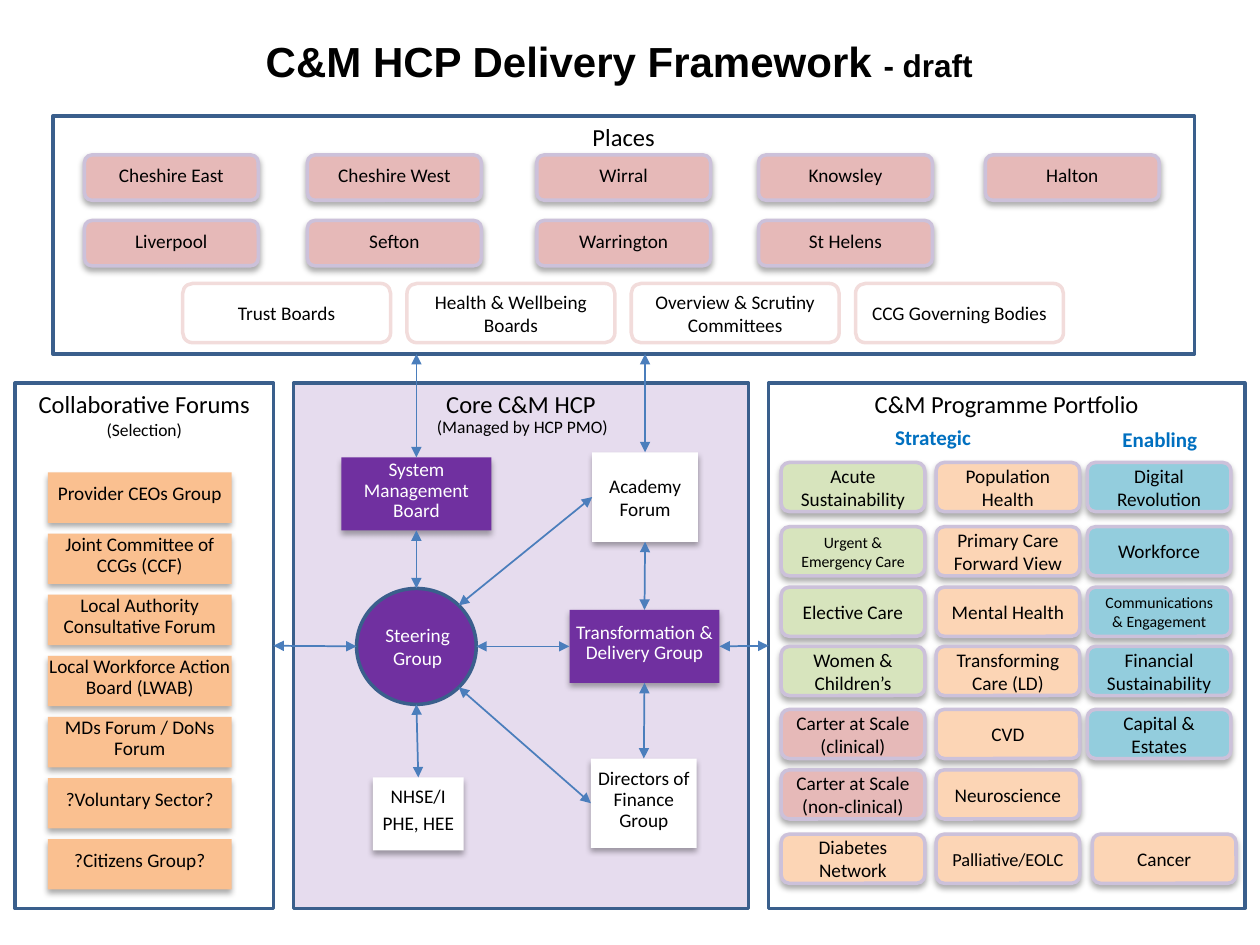
from math import sqrt

from lxml import etree
from pptx import Presentation
from pptx.dml.color import RGBColor
from pptx.enum.shapes import MSO_CONNECTOR, MSO_SHAPE
from pptx.enum.text import MSO_ANCHOR, PP_ALIGN
from pptx.oxml.ns import qn
from pptx.util import Inches, Pt

RECT, ROUND, OVAL = MSO_SHAPE.RECTANGLE, MSO_SHAPE.ROUNDED_RECTANGLE, MSO_SHAPE.OVAL
TOP, MIDDLE = MSO_ANCHOR.TOP, MSO_ANCHOR.MIDDLE
CENTER = PP_ALIGN.CENTER
STRAIGHT = MSO_CONNECTOR.STRAIGHT

BLACK, WHITE = "000000", "FFFFFF"
NAVY, ARROW, PURPLE, HEADING = "3A5F8C", "4B7EBC", "7030A0", "0070C0"
ROSE, PEACH, GREEN, TEAL, ORANGE = "E6B9B8", "FCD5B5", "D7E4BD", "93CDDD", "FAC090"
LILAC, BLUSH = "CCC1DA", "F2DCDB"

PLACE_COLUMNS = [0.67, 2.44, 4.26, 6.02, 7.82]
PLACE_ROWS = [1.23, 1.75]
PLACES = [
    ["Cheshire East", "Cheshire West", "Wirral", "Knowsley", "Halton"],
    ["Liverpool", "Sefton", "Warrington", "St Helens"],
]
BOARDS = ["Trust Boards", "Health & Wellbeing Boards",
          "Overview & Scrutiny Committees", "CCG Governing Bodies"]
FORUMS = ["Provider CEOs Group", "Joint Committee of CCGs (CCF)",
          "Local Authority Consultative Forum", "Local Workforce Action Board (LWAB)",
          "MDs Forum / DoNs Forum", "?Voluntary Sector?", "?Citizens Group?"]
PROGRAMME_COLUMNS = [6.2, 7.43, 8.63]
PROGRAMME_ROWS = [3.67, 4.18, 4.66, 5.13, 5.63, 6.11, 6.62]
PROGRAMMES = [
    [("Acute Sustainability", GREEN), ("Urgent & Emergency Care", GREEN),
     ("Elective Care", GREEN), ("Women & Children’s", GREEN),
     ("Carter at Scale (clinical)", ROSE), ("Carter at Scale (non-clinical)", ROSE),
     ("Diabetes Network", PEACH)],
    [("Population Health", PEACH), ("Primary Care Forward View", PEACH),
     ("Mental Health", PEACH), ("Transforming Care (LD)", PEACH), ("CVD", PEACH),
     ("Neuroscience", PEACH), ("Palliative/EOLC", PEACH)],
    [("Digital Revolution", TEAL), ("Workforce", TEAL),
     ("Communications & Engagement", TEAL), ("Financial Sustainability", TEAL),
     ("Capital & Estates", TEAL)],
]
SMALLER_LABELS = {"Urgent & Emergency Care": 9, "Communications & Engagement": 9,
                  "Palliative/EOLC": 10.5}


def rgb(color):
    return RGBColor.from_string(color)


def apply(target, formats):
    for name, value in formats.items():
        setattr(target, name, value)


def write(frame, lines, color=BLACK, anchor=TOP, bold=False, paragraph_format=None):
    apply(frame, {"word_wrap": True, "vertical_anchor": anchor})
    for index, (text, size) in enumerate(lines):
        paragraph = frame.paragraphs[0] if index == 0 else frame.add_paragraph()
        apply(paragraph, {"alignment": CENTER, **(paragraph_format or {})})
        run = paragraph.add_run()
        run.text = text
        apply(run.font, {"name": "Calibri", "size": Pt(size), "bold": bold})
        run.font.color.rgb = rgb(color)


def add_shadow(shape):
    effects = shape._element.spPr.find(qn("a:effectLst"))
    shadow = etree.SubElement(effects, qn("a:outerShdw"), blurRad=str(Pt(3.5)),
                              dist=str(Pt(2.2)), dir="5400000", rotWithShape="0")
    tint = etree.SubElement(shadow, qn("a:srgbClr"), val=BLACK)
    etree.SubElement(tint, qn("a:alpha"), val="32000")


def add_block(slide, kind, area, fill=None, outline=None, raised=False):
    block = slide.shapes.add_shape(kind, *map(Inches, area))
    block.shadow.inherit = False
    if fill:
        block.fill.solid()
        block.fill.fore_color.rgb = rgb(fill)
    else:
        block.fill.background()
    if outline:
        block.line.color.rgb = rgb(outline)
        block.line.width = Pt(2)
    else:
        block.line.fill.background()
    if raised:
        add_shadow(block)
    return block


def add_panel(slide, area, lines, fill=None):
    panel = add_block(slide, RECT, area, fill, NAVY)
    write(panel.text_frame, lines)
    return panel


def add_card(slide, area, lines, fill, color=BLACK):
    card = add_block(slide, RECT, area, fill, raised=True)
    apply(card.text_frame, {"margin_left": 0, "margin_right": 0,
                            "margin_top": Inches(0.01), "margin_bottom": Inches(0.06)})
    write(card.text_frame, [(line, 11) for line in lines], color, MIDDLE,
          paragraph_format={"line_spacing": 0.9, "space_after": Pt(3.85)})
    return card


def add_pill(slide, area, text, fill, outline=LILAC, anchor=MIDDLE):
    pill = add_block(slide, ROUND, area, fill, outline, raised=fill is not None)
    write(pill.text_frame, [(text, SMALLER_LABELS.get(text, 11))], anchor=anchor)


def add_label(slide, area, text, size, color=BLACK, bold=False):
    label = slide.shapes.add_textbox(*map(Inches, area))
    write(label.text_frame, [(text, size)], color, bold=bold)


def add_link(slide, start, start_site, end, end_site=None):
    link = slide.shapes.add_connector(STRAIGHT, 0, 0, 0, 0)
    link.begin_connect(start, start_site)
    if end_site is None:
        link.end_x, link.end_y = end
    else:
        link.end_connect(end, end_site)
    link.line.color.rgb = rgb(ARROW)
    link.line.width = Pt(1)
    line = link.line._get_or_add_ln()
    for tip in ("a:headEnd", "a:tailEnd"):
        etree.SubElement(line, qn(tip), type="triangle")
    etree.SubElement(link._element.spPr, qn("a:effectLst"))


def rim_point(shape, across, down):
    return (round(shape.left + shape.width * (1 + across) / 2),
            round(shape.top + shape.height * (1 + down) / 2))


def below(shape, panel):
    return shape.left + shape.width // 2, panel.top + panel.height


def add_title(slide):
    title = slide.shapes.title
    apply(title, dict(zip(("left", "top", "width", "height"),
                          map(Inches, (0.78, 0.21, 8.27, 0.55)))))
    title.text_frame.vertical_anchor = MIDDLE
    paragraph = title.text_frame.paragraphs[0]
    paragraph.alignment = CENTER
    for text, size in (("C&M HCP Delivery Framework ", 24), ("- draft", 18)):
        run = paragraph.add_run()
        run.text = text
        apply(run.font, {"name": "Arial", "size": Pt(size), "bold": True})
        run.font.color.rgb = rgb(BLACK)


def add_places(slide):
    panel = add_panel(slide, (0.42, 0.92, 9.06, 1.89), [("Places", 14)])
    for top, names in zip(PLACE_ROWS, PLACES):
        for left, name in zip(PLACE_COLUMNS, names):
            add_pill(slide, (left, top, 1.38, 0.36), name, ROSE, anchor=TOP)
    for column, name in enumerate(BOARDS):
        add_pill(slide, (1.45 + column * 1.78, 2.25, 1.65, 0.47), name, None, BLUSH)
    return panel


def add_forums(slide):
    panel = add_panel(slide, (0.12, 3.04, 2.05, 4.17),
                      [("Collaborative Forums", 14), ("(Selection)", 10)])
    for row, name in enumerate(FORUMS):
        add_card(slide, (0.38, 3.75 + row * 0.485, 1.46, 0.4), [name], ORANGE)
    return panel


def add_portfolio(slide):
    panel = add_panel(slide, (6.1, 3.04, 3.78, 4.17), [("C&M Programme Portfolio", 14)])
    add_label(slide, (6.97, 3.32, 0.87, 0.3), "Strategic", 12, HEADING, True)
    add_label(slide, (8.77, 3.34, 0.87, 0.3), "Enabling", 12, HEADING, True)
    for left, programmes in zip(PROGRAMME_COLUMNS, PROGRAMMES):
        for top, (name, fill) in zip(PROGRAMME_ROWS, programmes):
            add_pill(slide, (left, top, 1.14, 0.39), name, fill)
    add_pill(slide, (8.67, PROGRAMME_ROWS[-1], 1.14, 0.39), "Cancer", PEACH)
    return panel


def add_core(slide, places, forums, portfolio):
    core = add_panel(slide, (2.33, 3.04, 3.61, 4.17), [("Core C&M HCP", 14)], PURPLE)
    tint = core._element.spPr.find(qn("a:solidFill"))[0]
    etree.SubElement(tint, qn("a:alpha"), val="17000")
    add_label(slide, (3.14, 3.25, 2.01, 0.27), "(Managed by HCP PMO)", 10)
    academy = add_block(slide, RECT, (4.7, 3.59, 0.84, 0.71), WHITE, raised=True)
    write(academy.text_frame, [("Academy Forum", 11)], anchor=MIDDLE)
    finance = add_card(slide, (4.69, 6.02, 0.84, 0.71), ["Directors of Finance Group"], WHITE)
    delivery = add_card(slide, (4.52, 4.84, 1.19, 0.58),
                        ["Transformation & Delivery Group"], PURPLE, WHITE)
    board = add_card(slide, (2.71, 3.63, 1.19, 0.58), ["System Management Board"], PURPLE, WHITE)
    partners = add_card(slide, (2.96, 6.17, 0.72, 0.58), ["NHSE/I", "PHE, HEE"], WHITE)
    steering = add_block(slide, OVAL, (2.83, 4.67, 0.95, 0.92), PURPLE, NAVY)
    add_label(slide, (2.8, 4.9, 1.03, 0.47), "Steering Group", 11, WHITE)
    for card in (board, academy):
        add_link(slide, card, 0, below(card, places))
    diagonal = 1 / sqrt(2)
    for card, site, across, down in (
        (board, 2, 0, -1), (partners, 0, 0, 1), (forums, 3, -1, 0), (delivery, 1, 1, 0),
        (academy, 1, diagonal, -diagonal), (finance, 1, diagonal, diagonal),
    ):
        add_link(slide, card, site, rim_point(steering, across, down))
    add_link(slide, academy, 2, delivery, 0)
    add_link(slide, delivery, 2, finance, 0)
    add_link(slide, delivery, 3, portfolio, 1)


def main():
    deck = Presentation()
    deck.slide_width, deck.slide_height = Inches(10), Inches(7.5)
    slide = deck.slides.add_slide(deck.slide_layouts[5])
    add_title(slide)
    places = add_places(slide)
    forums = add_forums(slide)
    portfolio = add_portfolio(slide)
    add_core(slide, places, forums, portfolio)
    deck.save("out.pptx")


if __name__ == "__main__":
    main()
